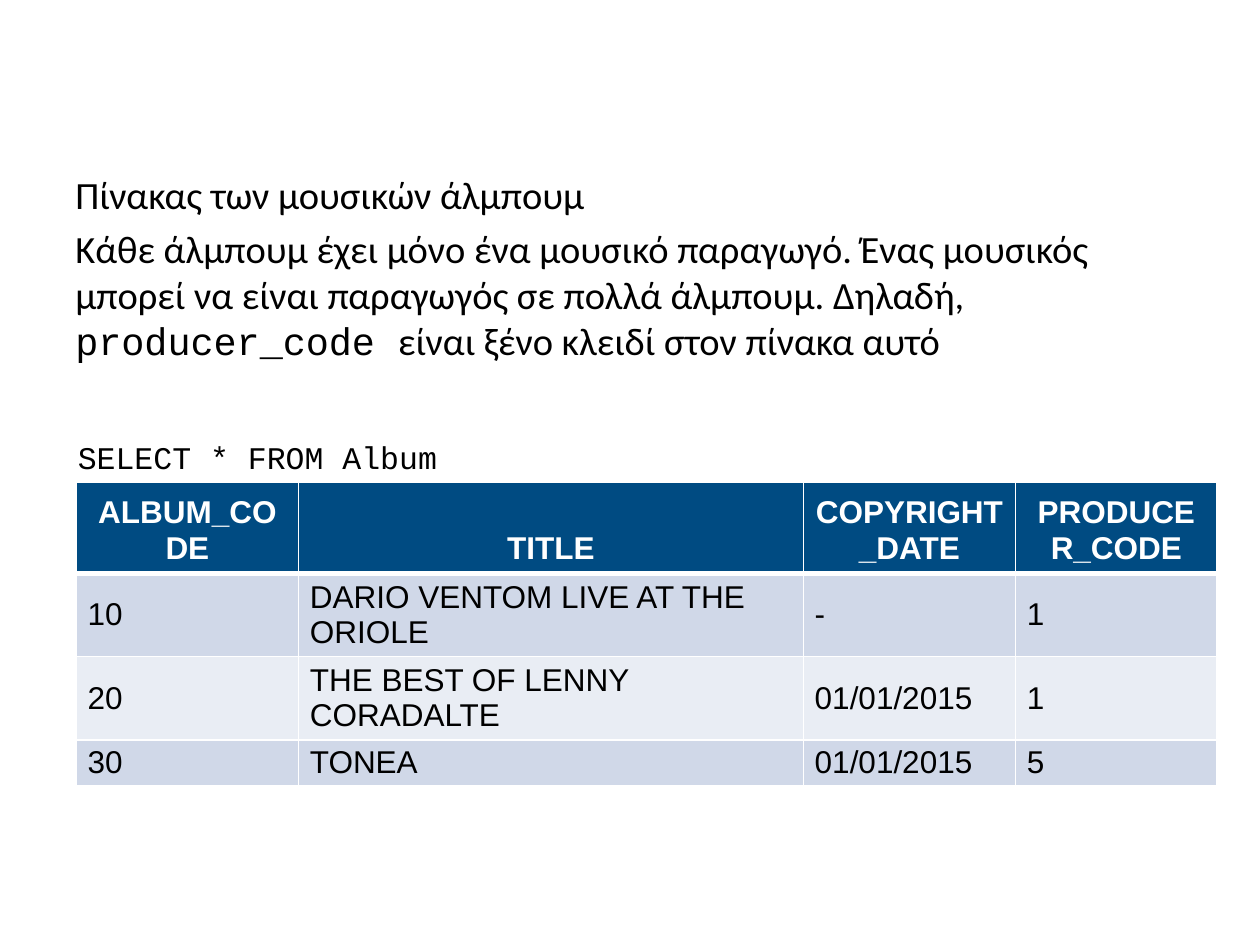
from lxml import etree
from pptx import Presentation
from pptx.dml.color import RGBColor
from pptx.enum.text import MSO_ANCHOR, PP_ALIGN
from pptx.oxml.ns import qn
from pptx.util import Pt

CENTER, LEFT = PP_ALIGN.CENTER, PP_ALIGN.LEFT
BOTTOM, MIDDLE = MSO_ANCHOR.BOTTOM, MSO_ANCHOR.MIDDLE
BLACK, WHITE, NAVY = "000000", "FFFFFF", "004B82"
BANDS = ("D0D8E8", "E9EDF4")
SANS, MONO, GRID = "Calibri", "Courier New", "Arial"

INTRO = [
    [("Πίνακας των μουσικών άλμπουμ", SANS)],
    [("Κάθε άλμπουμ έχει μόνο ένα μουσικό παραγωγό. Ένας μουσικός "
      "μπορεί να είναι παραγωγός σε πολλά άλμπουμ. Δηλαδή, ", SANS),
     ("producer_code ", MONO),
     ("είναι ξένο κλειδί στον πίνακα αυτό", SANS)],
]
QUERY = "SELECT * FROM Album"
ALBUMS = [
    ("ALBUM_CODE", "TITLE", "COPYRIGHT_DATE", "PRODUCER_CODE"),
    ("10", "DARIO VENTOM LIVE AT THE ORIOLE", "-", "1"),
    ("20", "THE BEST OF LENNY CORADALTE", "01/01/2015", "1"),
    ("30", "TONEA", "01/01/2015", "5"),
]
WIDTHS = (127, 288.5, 121.25, 115.25)
HEIGHTS = (51.5, 47.5, 47.5, 26.3)


def color(code):
    return RGBColor.from_string(code)


def style(run, face, size, code=BLACK, bold=False):
    font = run.font
    font.name, font.size, font.bold = face, Pt(size), bold
    font.color.rgb = color(code)


def add_box(slide, left, top, width, height, wrap):
    box = slide.shapes.add_textbox(Pt(left), Pt(top), Pt(width), Pt(height))
    box.text_frame.word_wrap = wrap
    return box.text_frame


def add_intro(slide, left, top, width, height):
    frame = add_box(slide, left, top, width, height, True)
    for i, parts in enumerate(INTRO):
        para = frame.paragraphs[0] if i == 0 else frame.add_paragraph()
        para.space_before = Pt(4.4)
        for text, face in parts:
            run = para.add_run()
            run.text = text
            style(run, face, 22)


def add_query(slide, left, top, width, height):
    frame = add_box(slide, left, top, width, height, False)
    frame.text = QUERY
    style(frame.paragraphs[0].runs[0], MONO, 18)


def add_edges(cell, base):
    """Draw white cell borders, the lower one of the given width."""
    props = cell._tc.get_or_add_tcPr()
    edges = (("a:lnL", 1), ("a:lnR", 1), ("a:lnT", 1), ("a:lnB", base))
    for i, (tag, size) in enumerate(edges):
        line = etree.Element(qn(tag), w=str(Pt(size)))
        fill = etree.SubElement(line, qn("a:solidFill"))
        etree.SubElement(fill, qn("a:srgbClr"), val=WHITE)
        props.insert(i, line)


def fill_cell(cell, text, row):
    head = row == 0
    cell.text = text
    cell.vertical_anchor = BOTTOM if head else MIDDLE
    cell.margin_left = cell.margin_right = Pt(6.5)
    cell.margin_top = cell.margin_bottom = Pt(4.3 if head else 2.2)
    cell.fill.solid()
    cell.fill.fore_color.rgb = color(NAVY if head else BANDS[(row - 1) % 2])
    para = cell.text_frame.paragraphs[0]
    para.alignment = CENTER if head else LEFT
    style(para.runs[0], GRID, 18, WHITE if head else BLACK, head)
    # The rule under the header is heavier, and shared with the row below
    add_edges(cell, 3 if head else 1)
    if row == 1:
        cell._tc.tcPr.find(qn("a:lnT")).set("w", str(Pt(3)))


def add_albums(slide, left, top):
    grid = slide.shapes.add_table(
        len(ALBUMS), len(WIDTHS), Pt(left), Pt(top),
        Pt(sum(WIDTHS)), Pt(sum(HEIGHTS))).table
    for col, width in zip(grid.columns, WIDTHS):
        col.width = Pt(width)
    for r, (height, texts) in enumerate(zip(HEIGHTS, ALBUMS)):
        grid.rows[r].height = Pt(height)
        for c, text in enumerate(texts):
            fill_cell(grid.cell(r, c), text, r)


def main():
    deck = Presentation()
    deck.slide_width, deck.slide_height = Pt(720), Pt(540)
    slide = deck.slides.add_slide(deck.slide_layouts[6])
    # Explanation, then the query and its result
    add_intro(slide, 36, 94.3, 648, 396.7)
    add_query(slide, 37.4, 246.6, 221, 29)
    add_albums(slide, 43.6, 275.8)
    deck.save("out.pptx")


if __name__ == "__main__":
    main()
